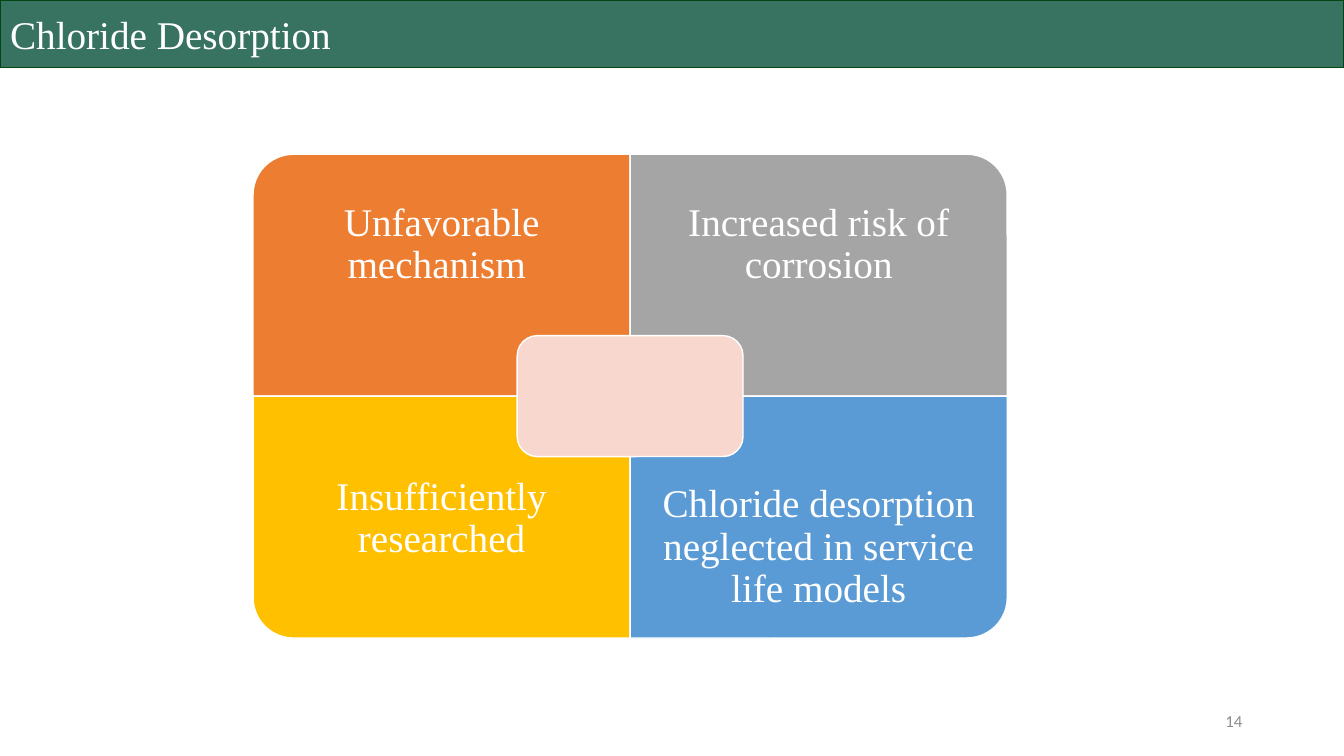
"""Build the Chloride Desorption slide: a titled matrix of four quadrants."""
from dataclasses import dataclass

from pptx import Presentation
from pptx.dml.color import RGBColor
from pptx.enum.shapes import MSO_SHAPE
from pptx.enum.text import MSO_ANCHOR, MSO_AUTO_SIZE, PP_ALIGN
from pptx.util import Inches, Pt


@dataclass(frozen=True)
class Theme:
    banner: str = "387261"
    banner_line: str = "004712"
    orange: str = "ED7D31"
    gray: str = "A5A5A5"
    yellow: str = "FFC000"
    blue: str = "5B9BD5"
    center: str = "F8D7CE"
    white: str = "FFFFFF"
    number: str = "8C8C8C"
    heading_font: str = "Times New Roman"
    number_font: str = "Calibri"
    text_size: int = 28
    number_size: int = 12


theme = Theme()


def write_text(shape, text, *, font=theme.heading_font, size=theme.text_size,
               color=theme.white, align=PP_ALIGN.LEFT, spacing=1.0,
               inset=(0.1, 0.05, 0.1, 0.05)):
    frame = shape.text_frame
    frame.word_wrap = True
    frame.auto_size = MSO_AUTO_SIZE.NONE
    frame.vertical_anchor = MSO_ANCHOR.MIDDLE
    (frame.margin_left, frame.margin_top,
     frame.margin_right, frame.margin_bottom) = map(Inches, inset)
    paragraph = frame.paragraphs[0]
    paragraph.alignment = align
    paragraph.line_spacing = spacing
    run = paragraph.add_run()
    run.text = text
    run.font.name = font
    run.font.size = Pt(size)
    run.font.color.rgb = RGBColor.from_string(color)


def paint(shape, fill, line):
    shape.fill.solid()
    shape.fill.fore_color.rgb = RGBColor.from_string(fill)
    shape.line.color.rgb = RGBColor.from_string(line)
    shape.line.width = Pt(1)
    shape.shadow.inherit = False


presentation = Presentation()
presentation.slide_width = Inches(13.33)
presentation.slide_height = Inches(7.5)
slide = presentation.slides.add_slide(presentation.slide_layouts[5])

title = slide.shapes.title
title.left, title.top = Inches(0), Inches(0)
title.width, title.height = Inches(13.33), Inches(0.67)
paint(title, theme.banner, theme.banner_line)
write_text(title, "Chloride Desorption")

matrix_left, matrix_top = 2.51, 1.53
quadrant_width, quadrant_height = 3.74, 2.4
label_height = 1.8
margin = 0.22
quadrants = [
    ("Unfavorable mechanism ", theme.orange, 0, 0, 270, margin),
    ("Increased risk of corrosion", theme.gray, 0, 1, 0, margin),
    ("Insufficiently researched", theme.yellow, 1, 0, 180, 0.78),
    ("Chloride desorption neglected in service life models", theme.blue, 1, 1, 90, margin),
]
for text, color, row, column, rotation, bottom_margin in quadrants:
    left = matrix_left + column * quadrant_width
    top = matrix_top + row * quadrant_height
    width, height = quadrant_width, quadrant_height
    if rotation % 180:
        width, height = height, width
    quadrant = slide.shapes.add_shape(
        MSO_SHAPE.ROUND_1_RECTANGLE,
        Inches(left + (quadrant_width - width) / 2),
        Inches(top + (quadrant_height - height) / 2),
        Inches(width), Inches(height))
    quadrant.rotation = rotation
    paint(quadrant, color, theme.white)

    label_top = top + row * (quadrant_height - label_height)
    label = slide.shapes.add_textbox(
        Inches(left), Inches(label_top), Inches(quadrant_width), Inches(label_height))
    write_text(label, text, align=PP_ALIGN.CENTER, spacing=0.9,
               inset=(margin, margin, margin, bottom_margin))

center_width, center_height = 2.24, 1.2
center = slide.shapes.add_shape(
    MSO_SHAPE.ROUNDED_RECTANGLE,
    Inches(matrix_left + quadrant_width - center_width / 2),
    Inches(matrix_top + quadrant_height - center_height / 2),
    Inches(center_width), Inches(center_height))
paint(center, theme.center, theme.white)

slide_number = slide.shapes.add_textbox(Inches(9.42), Inches(6.95), Inches(3), Inches(0.4))
write_text(slide_number, "14", font=theme.number_font, size=theme.number_size,
           color=theme.number, align=PP_ALIGN.RIGHT)

presentation.save("out.pptx")
